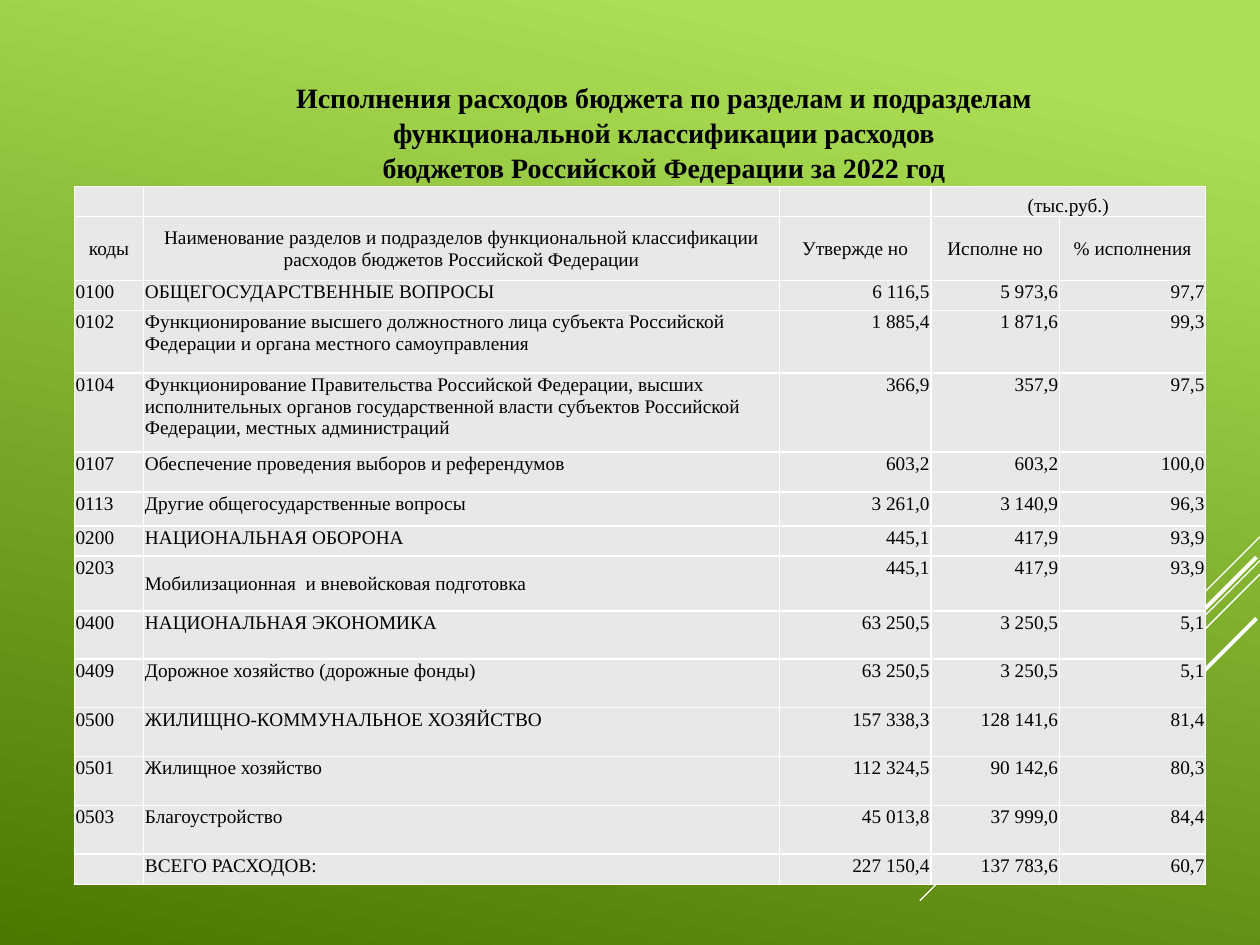
from lxml import etree
from pptx import Presentation
from pptx.dml.color import RGBColor
from pptx.enum.shapes import MSO_CONNECTOR
from pptx.enum.text import MSO_ANCHOR, PP_ALIGN
from pptx.oxml.ns import qn
from pptx.util import Inches, Pt

LEFT, CENTER, RIGHT, JUSTIFY = PP_ALIGN.LEFT, PP_ALIGN.CENTER, PP_ALIGN.RIGHT, PP_ALIGN.JUSTIFY
TOP, MIDDLE, BOTTOM = MSO_ANCHOR.TOP, MSO_ANCHOR.MIDDLE, MSO_ANCHOR.BOTTOM
STRAIGHT = MSO_CONNECTOR.STRAIGHT

COLORS = {"light": "ACDF55", "dark": "4C7800", "line": "FFFFFF", "cell": "E8E9E7", "text": "000000"}
FONT = "Times New Roman"
BODY_SIZE = 11

TITLE = [
    "Исполнения расходов бюджета по разделам и подразделам",
    "функциональной классификации расходов",
    "бюджетов Российской Федерации за 2022 год",
]
UNIT = "(тыс.руб.)"
HEADINGS = [
    "коды",
    "Наименование разделов и подразделов функциональной классификации расходов бюджетов Российской Федерации",
    "Утвержде но", "Исполне но", "% исполнения",
]
EXPENSES = [
    ("0100", "ОБЩЕГОСУДАРСТВЕННЫЕ ВОПРОСЫ", "6 116,5", "5 973,6", "97,7"),
    ("0102", "Функционирование высшего должностного лица субъекта Российской Федерации "
             "и органа местного самоуправления", "1 885,4", "1 871,6", "99,3"),
    ("0104", "Функционирование Правительства Российской Федерации, высших исполнительных органов "
             "государственной власти субъектов Российской Федерации, местных администраций",
     "366,9", "357,9", "97,5"),
    ("0107", "Обеспечение проведения выборов и референдумов", "603,2", "603,2", "100,0"),
    ("0113", "Другие общегосударственные вопросы", "3 261,0", "3 140,9", "96,3"),
    ("0200", "НАЦИОНАЛЬНАЯ ОБОРОНА", "445,1", "417,9", "93,9"),
    ("0203", "Мобилизационная  и вневойсковая подготовка", "445,1", "417,9", "93,9"),
    ("0400", "НАЦИОНАЛЬНАЯ ЭКОНОМИКА", "63 250,5", "3 250,5", "5,1"),
    ("0409", "Дорожное хозяйство (дорожные фонды)", "63 250,5", "3 250,5", "5,1"),
    ("0500", "ЖИЛИЩНО-КОММУНАЛЬНОЕ ХОЗЯЙСТВО", "157 338,3", "128 141,6", "81,4"),
    ("0501", "Жилищное хозяйство", "112 324,5", "90 142,6", "80,3"),
    ("0503", "Благоустройство", "45 013,8", "37 999,0", "84,4"),
    ("", "ВСЕГО РАСХОДОВ:", "227 150,4", "137 783,6", "60,7"),
]
COLUMN_WEIGHTS = [0.55, 5.04, 1.2, 1.02, 1.16]
ROW_WEIGHTS = [0.24, 0.51, 0.24, 0.5, 0.63, 0.32, 0.27, 0.24, 0.44, 0.38] + [0.39] * 4 + [0.24]
MIDDLE_CODES = {"0203"}
JUSTIFIED_CODES = {"0409", "0503"}

# Right end (x, y) and run of each 45-degree streak, as shares of the box width; line width in points
STREAKS = [
    (1, 0, 0.31, 0.75),
    (1, 0.07, 1, 0.75),
    (1, 0.11, 0.64, 0.75),
    (0.99, 0.06, 0.58, 2.25),
    (0.99, 0.24, 0.42, 2.25),
]


def rgb(name):
    return RGBColor.from_string(COLORS[name])


def write(frame, lines, size=BODY_SIZE, bold=False, align=LEFT, anchor=TOP, spacing=None, indent=None):
    frame.word_wrap = True
    frame.vertical_anchor = anchor
    for index, line in enumerate(lines):
        paragraph = frame.add_paragraph() if index else frame.paragraphs[0]
        paragraph.alignment = align
        if spacing:
            paragraph.line_spacing = spacing
        if indent:
            paragraph._p.get_or_add_pPr().set("indent", str(int(indent)))
        if not line:
            paragraph._p.get_or_add_endParaRPr().set("sz", str(size * 100))
            continue
        run = paragraph.add_run()
        run.text = line
        run.font.name, run.font.size, run.font.bold = FONT, Pt(size), bold
        run.font.color.rgb = rgb("text")


def paint_background(slide):
    fill = slide.background.fill
    fill.gradient()
    fill.gradient_angle = 360 - 102
    for stop, position, name in zip(fill.gradient_stops, (0.1, 1), ("light", "dark")):
        stop.position = position
        stop.color.rgb = rgb(name)


def draw_streaks(slide, left, top, width):
    for x, y, run, weight in STREAKS:
        ends = (left + width * x, top + width * y, left + width * (x - run), top + width * (y + run))
        streak = slide.shapes.add_connector(STRAIGHT, *map(int, ends))
        streak.line.color.rgb = rgb("line")
        streak.line.width = Pt(weight)
        etree.SubElement(streak._element.spPr, qn("a:effectLst"))


def add_title(slide, left, top, width, height):
    title = slide.shapes.add_textbox(left, top, width, height)
    write(title.text_frame, TITLE, size=16, bold=True, align=CENTER, anchor=MIDDLE,
          spacing=1.05, indent=Inches(0.38))


def style_cell(cell):
    cell.margin_left = cell.margin_right = cell.margin_top = Inches(0.01)
    cell.margin_bottom = 0
    cell.fill.solid()
    cell.fill.fore_color.rgb = rgb("cell")
    properties = cell._tc.get_or_add_tcPr()
    for index, side in enumerate(("lnL", "lnR", "lnT", "lnB")):
        border = etree.Element(qn(f"a:{side}"), w=str(Pt(1)))
        solid = etree.SubElement(border, qn("a:solidFill"))
        etree.SubElement(solid, qn("a:srgbClr"), val=COLORS["line"])
        properties.insert(index, border)


def cell_format(row, column, code):
    if row == 0:
        return {"align": CENTER, "anchor": BOTTOM}
    if row == 1:
        return {"align": CENTER, "anchor": MIDDLE}
    if column > 1:
        return {"align": RIGHT}
    if column == 1:
        return {"align": JUSTIFY if code in JUSTIFIED_CODES else LEFT,
                "anchor": MIDDLE if code in MIDDLE_CODES else TOP}
    return {}


def add_expense_table(slide, left, top, width, height):
    records = [("", "", "", UNIT, ""), HEADINGS, *EXPENSES]
    table = slide.shapes.add_table(len(records), len(HEADINGS), left, top, width, height).table
    table.first_row = table.horz_banding = False
    for column, weight in zip(table.columns, COLUMN_WEIGHTS):
        column.width = int(width * weight / sum(COLUMN_WEIGHTS))
    for row, weight in zip(table.rows, ROW_WEIGHTS):
        row.height = int(height * weight / sum(ROW_WEIGHTS))
    for r, record in enumerate(records):
        for c, entry in enumerate(record):
            cell = table.cell(r, c)
            style_cell(cell)
            options = cell_format(r, c, record[0])
            write(cell.text_frame, [entry], **options)
            cell.vertical_anchor = options.get("anchor", TOP)
            # Wrapping and anchoring of a cell belong to the cell itself
            body = cell.text_frame._txBody.bodyPr
            body.attrib.clear()
    table.cell(0, 3).merge(table.cell(0, 4))


def main():
    deck = Presentation()
    deck.slide_width, deck.slide_height = Inches(10), Inches(7.5)
    slide = deck.slides.add_slide(deck.slide_layouts[6])
    paint_background(slide)
    draw_streaks(slide, Inches(7.3), Inches(4.26), Inches(2.7))
    add_title(slide, Inches(0.75), Inches(0.59), Inches(8.66), Inches(0.91))
    add_expense_table(slide, Inches(0.59), Inches(1.48), Inches(8.98), Inches(5.54))
    deck.save("out.pptx")


if __name__ == "__main__":
    main()
